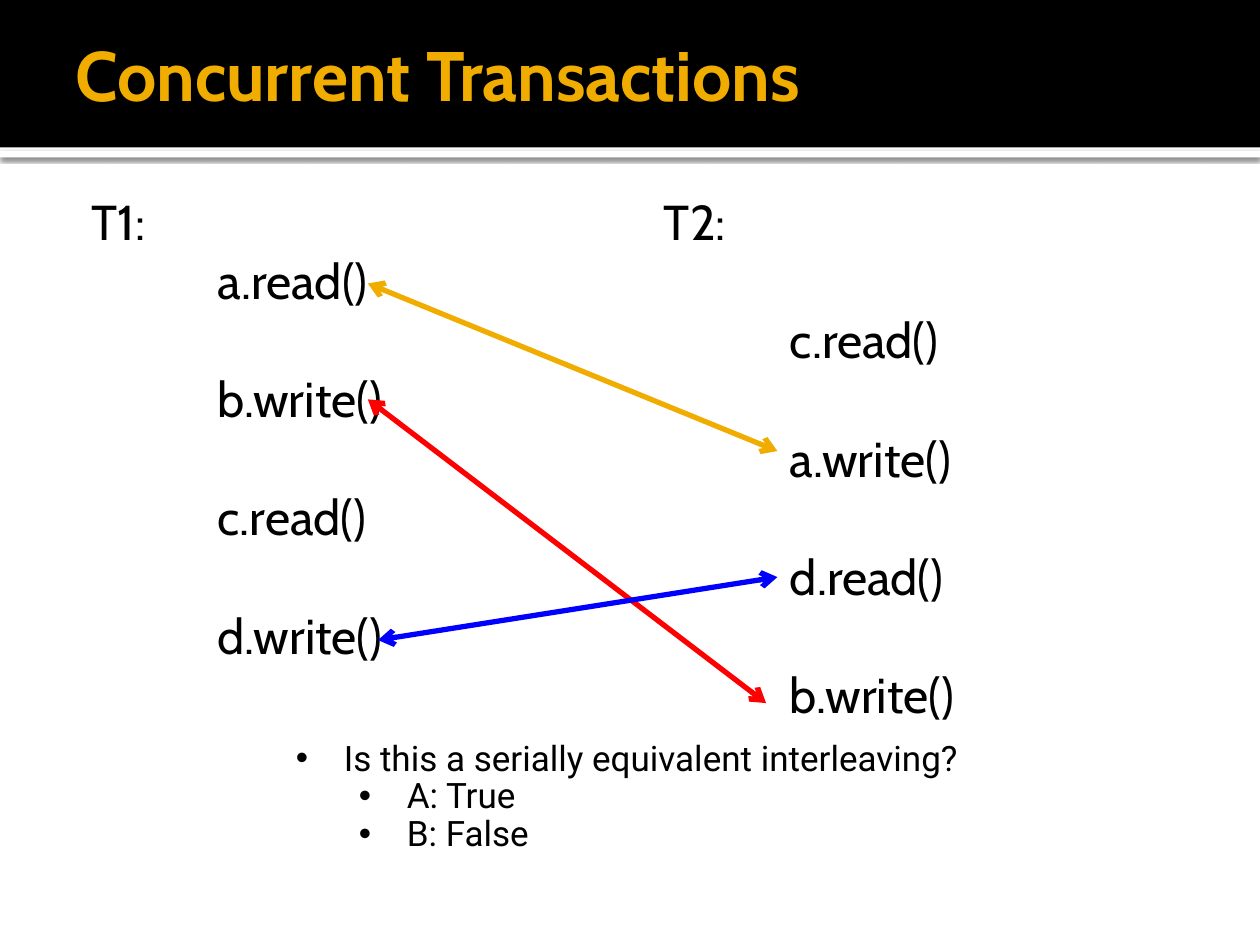
from lxml import etree
from pptx import Presentation
from pptx.dml.color import RGBColor
from pptx.enum import shapes, text
from pptx.oxml import ns
from pptx.util import Inches, Pt

BLACK, WHITE, GOLD, RED, BLUE = "000000", "FFFFFF", "F0AD00", "FF0000", "0000FF"
ROW_HEIGHT = 34  # points, one line of 28 pt text


def color(hex_value):
    return RGBColor.from_string(hex_value)


def add_child(parent, tag, **attributes):
    return etree.SubElement(parent, ns.qn(tag), attributes)


def add_bar(slide, top, height, fill):
    bar = slide.shapes.add_shape(shapes.MSO_SHAPE.RECTANGLE, 0, Inches(top),
                                 Inches(10), Inches(height))
    bar.shadow.inherit = False
    bar.fill.solid()
    bar.fill.fore_color.rgb = color(fill)
    bar.line.fill.background()
    return bar


def add_soft_shadow(shape):
    effects = shape._element.spPr.find(ns.qn("a:effectLst"))
    shadow = add_child(effects, "a:outerShdw", blurRad=str(Pt(2.5)),
                       dist=str(Pt(0.8)), dir="5400000", rotWithShape="0")
    shade = add_child(shadow, "a:srgbClr", val=BLACK)
    add_child(shade, "a:alpha", val="60000")


def add_text_frame(slide, left, top, width, height, insets=(0.1, 0.05, 0.1, 0.05)):
    box = slide.shapes.add_textbox(Inches(left), Inches(top), Inches(width), Inches(height))
    frame = box.text_frame
    frame.word_wrap = True
    (frame.margin_left, frame.margin_top,
     frame.margin_right, frame.margin_bottom) = map(Inches, insets)
    return frame


def style(paragraph, size, font="Cabin", fill=BLACK, bold=False):
    for run in paragraph.runs:
        run.font.size = Pt(size)
        run.font.name = font
        run.font.bold = bold
        run.font.color.rgb = color(fill)


def set_indent(paragraph, left, first=0):
    properties = paragraph._p.get_or_add_pPr()
    properties.set("marL", str(Inches(left)))
    properties.set("indent", str(Inches(first)))
    return properties


def add_transaction(slide, left, left_inset, name, operations, first_row):
    """List the operations on every second row, starting at first_row."""
    frame = add_text_frame(slide, left, 1.42, 4.42, 5.58, (left_inset, 0.1, 0.1, 0.05))
    frame.text = "\n".join([name, *operations])
    for index, paragraph in enumerate(frame.paragraphs):
        style(paragraph, 28)
        set_indent(paragraph, 1.13 if index else 0.13)
        skipped_rows = first_row - 1 if index == 1 else min(index, 1)
        paragraph.space_before = Pt(ROW_HEIGHT * skipped_rows)


def add_conflict_arrow(slide, start, end, stroke):
    arrow = slide.shapes.add_connector(shapes.MSO_CONNECTOR.STRAIGHT,
                                       *map(Inches, start + end))
    arrow.line.color.rgb = color(stroke)
    arrow.line.width = Pt(3)
    line = arrow.line._get_or_add_ln()
    add_child(line, "a:headEnd", type="arrow")
    add_child(line, "a:tailEnd", type="arrow")
    add_child(arrow._element.spPr, "a:effectLst")


def add_question(slide, question, answers):
    frame = add_text_frame(slide, 2.25, 5.83, 5.52, 1.02)
    frame.text = "\n".join([question, *answers])
    for index, paragraph in enumerate(frame.paragraphs):
        style(paragraph, 20, "Roboto")
        paragraph.level = min(index, 1)
        paragraph.line_spacing = 0.9
        properties = set_indent(paragraph, 0.88 if index else 0.38, -0.38)
        add_child(properties, "a:buFont", typeface="Arial")
        add_child(properties, "a:buChar", char="•")


def main():
    presentation = Presentation()
    presentation.slide_width, presentation.slide_height = Inches(10), Inches(7.5)
    slide = presentation.slides.add_slide(presentation.slide_layouts[6])

    # Header band and title
    add_soft_shadow(add_bar(slide, 1.2, 0.05, WHITE))
    add_bar(slide, 0, 1.17, BLACK)
    title = add_text_frame(slide, 0.5, 0.08, 9, 1, (0.1, 0.05, 0.05, 0.05))
    title.vertical_anchor = text.MSO_ANCHOR.MIDDLE
    title.text = "Concurrent Transactions"
    style(title.paragraphs[0], 40, fill=GOLD, bold=True)

    # Interleaved transactions
    add_transaction(slide, 0.5, 0.1, "T1:",
                    ["a.read()", "b.write()", "c.read()", "d.write()"], first_row=1)
    add_transaction(slide, 5.08, 0.06, "T2:",
                    ["c.read()", "a.write()", "d.read()", "b.write()"], first_row=2)

    # Conflicting operations
    add_conflict_arrow(slide, (2.92, 2.25), (6.17, 3.58), GOLD)
    add_conflict_arrow(slide, (2.92, 3.17), (6.08, 5.58), RED)
    add_conflict_arrow(slide, (3, 5.08), (6.17, 4.58), BLUE)

    # Question
    add_question(slide, "Is this a serially equivalent interleaving?",
                 ["A: True", "B: False"])

    presentation.save("out.pptx")


if __name__ == "__main__":
    main()
